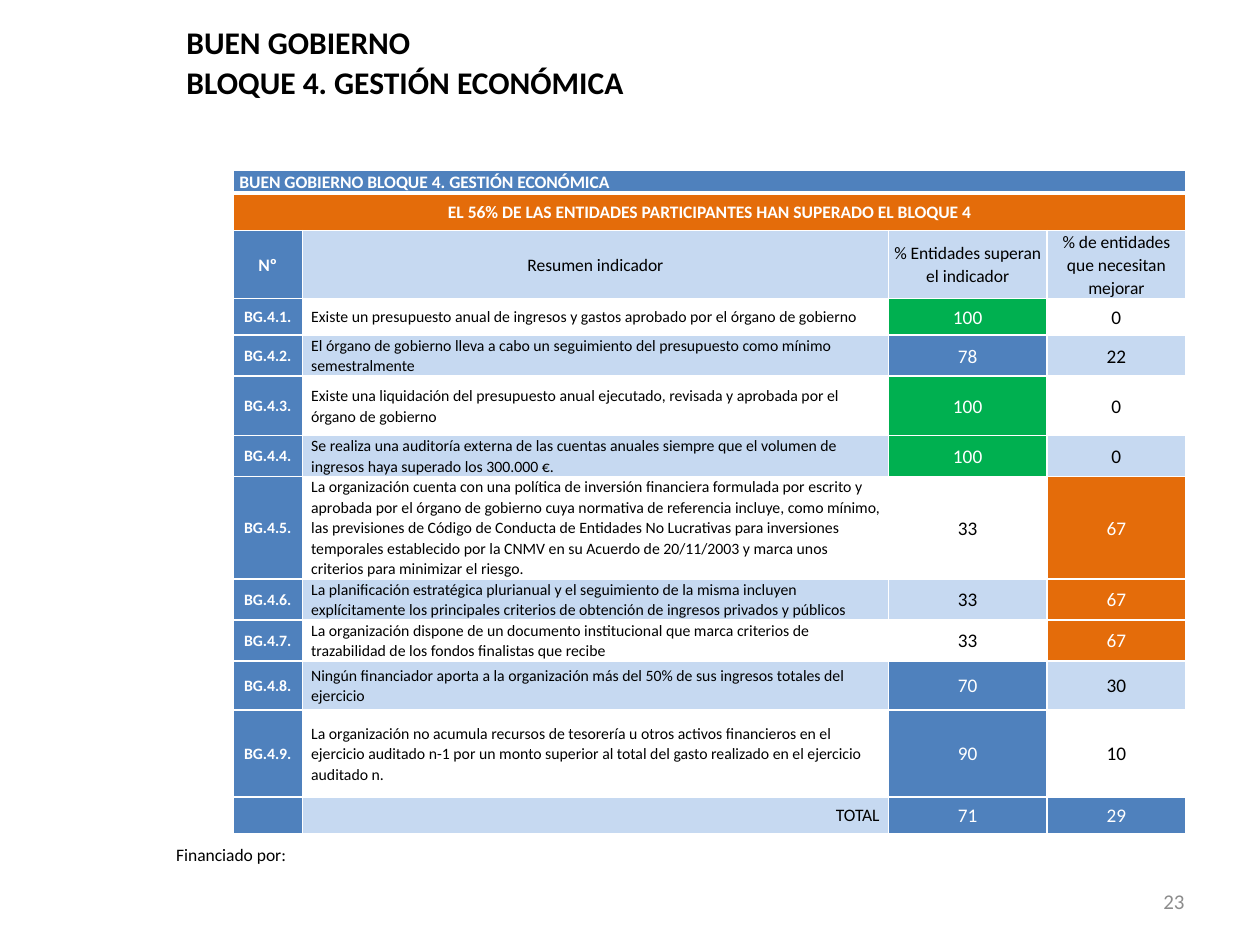
import pptx
import pptx.util
import pptx.dml.color
import pptx.enum.text
import pptx.oxml
import pptx.oxml.ns

Inches, Pt = pptx.util.Inches, pptx.util.Pt
ALIGN = pptx.enum.text.PP_ALIGN
ANCHOR = pptx.enum.text.MSO_ANCHOR

# Content
TITLE = ["BUEN GOBIERNO", "BLOQUE 4. GESTIÓN ECONÓMICA"]
BLOCK = "BUEN GOBIERNO BLOQUE 4. GESTIÓN ECONÓMICA"
RESULT = "EL 56% DE LAS ENTIDADES PARTICIPANTES HAN SUPERADO EL BLOQUE 4"
HEADINGS = ["Nº", "Resumen indicador", "% Entidades superan el indicador",
            "% de entidades que necesitan mejorar"]
# Summary, % that pass, % that need to improve, row height
INDICATORS = [
    ("Existe un presupuesto anual de ingresos y gastos aprobado por el órgano de gobierno",
     100, 0, 0.29),
    ("El órgano de gobierno lleva a cabo un seguimiento del presupuesto como mínimo "
     "semestralmente", 78, 22, 0.22),
    ("Existe una liquidación del presupuesto anual ejecutado, revisada y aprobada por el "
     "órgano de gobierno", 100, 0, 0.47),
    ("Se realiza una auditoría externa de las cuentas anuales siempre que el volumen de "
     "ingresos haya superado los 300.000 €.", 100, 0, 0.19),
    ("La organización cuenta con una política de inversión financiera formulada por escrito y "
     "aprobada por el órgano de gobierno cuya normativa de referencia incluye, como mínimo, "
     "las previsiones de Código de Conducta de Entidades No Lucrativas para inversiones "
     "temporales establecido por la CNMV en su Acuerdo de 20/11/2003 y marca unos criterios "
     "para minimizar el riesgo.", 33, 67, 0.27),
    ("La planificación estratégica plurianual y el seguimiento de la misma incluyen "
     "explícitamente los principales criterios de obtención de ingresos privados y públicos",
     33, 67, 0.31),
    ("La organización dispone de un documento institucional que marca criterios de "
     "trazabilidad de los fondos finalistas que recibe", 33, 67, 0.32),
    ("Ningún financiador aporta a la organización más del 50% de sus ingresos totales del "
     "ejercicio", 70, 30, 0.39),
    ("La organización no acumula recursos de tesorería u otros activos financieros en el "
     "ejercicio auditado n-1 por un monto superior al total del gasto realizado en el "
     "ejercicio auditado n.", 90, 10, 0.69),
]
TOTAL = ("TOTAL", 71, 29)
FUNDING = "Financiado por:"
PAGE = "23"

THEME = {
    "font": "Calibri", "black": "000000", "white": "FFFFFF", "grey": "8C8C8C",
    "blue": "4F81BD", "light": "C6D9F1", "orange": "E46C0A", "green": "00B050",
    "title": 18, "page": 12, "figure": 11, "heading": 10, "body": 9,
}
COLUMN_WIDTHS = [0.55, 4.65, 1.26, 1.1]
ROW_HEIGHTS = [0.18, 0.3, 0.52] + [row[-1] for row in INDICATORS] + [0.29]


def rgb(name):
    return pptx.dml.color.RGBColor.from_string(THEME[name])


def write(frame, lines, size, color="black", bold=False, align=ALIGN.LEFT, spacing=None):
    for i, line in enumerate(lines):
        paragraph = frame.paragraphs[0] if i == 0 else frame.add_paragraph()
        paragraph.text = line
        layout = {"alignment": align, "line_spacing": spacing, "space_before": Pt(0)}
        for key, value in layout.items():
            setattr(paragraph, key, value)
        style = {"name": THEME["font"], "size": Pt(THEME[size]), "bold": bold}
        for key, value in style.items():
            setattr(paragraph.font, key, value)
        paragraph.font.color.rgb = rgb(color)


def set_borders(cell, **widths):
    """White borders of 1 pt, unless a side is given its own width."""
    properties = cell._tc.get_or_add_tcPr()
    for i, side in enumerate(("lnL", "lnR", "lnT", "lnB")):
        properties.insert(i, pptx.oxml.parse_xml(
            f'<a:{side} {pptx.oxml.ns.nsdecls("a")} w="{Pt(widths.get(side, 1))}">'
            f'<a:solidFill><a:srgbClr val="{THEME["white"]}"/></a:solidFill></a:{side}>'))


def fill_cell(cell, text, fill, size, color="white", bold=False, align=ALIGN.CENTER,
              inset=0.07, **borders):
    margins = {"margin_left": Inches(inset), "margin_right": Inches(inset),
               "margin_top": 0, "margin_bottom": 0, "vertical_anchor": ANCHOR.MIDDLE}
    for key, value in margins.items():
        setattr(cell, key, value)
    cell.fill.solid()
    cell.fill.fore_color.rgb = rgb(fill)
    write(cell.text_frame, [str(text)], size, color, bold, align, 1.07)
    set_borders(cell, **borders)


def add_label(slide, box, text, size, color, align=ALIGN.LEFT, anchor=ANCHOR.TOP):
    frame = slide.shapes.add_textbox(*map(Inches, box)).text_frame
    frame.word_wrap = True
    frame.vertical_anchor = anchor
    write(frame, [text], size, color, align=align)


def add_indicator_table(slide):
    table = slide.shapes.add_table(
        len(ROW_HEIGHTS), len(COLUMN_WIDTHS), Inches(1.85), Inches(1.35),
        Inches(sum(COLUMN_WIDTHS)), Inches(sum(ROW_HEIGHTS))).table
    for column, width in zip(table.columns, COLUMN_WIDTHS):
        column.width = Inches(width)
    for row, height in zip(table.rows, ROW_HEIGHTS):
        row.height = Inches(height)

    # Banner rows across the full width
    for r in (0, 1):
        table.cell(r, 0).merge(table.cell(r, 3))
    for c in range(4):
        fill_cell(table.cell(0, c), "" if c else BLOCK, "blue", "heading", bold=True,
                  align=ALIGN.LEFT, inset=0.05, lnB=3)
        fill_cell(table.cell(1, c), "" if c else RESULT, "orange", "heading", bold=True,
                  inset=0.02, lnT=3)

    # Column headings
    for c, heading in enumerate(HEADINGS):
        first = c == 0
        fill_cell(table.cell(2, c), heading, "blue" if first else "light", "heading",
                  "white" if first else "black", bold=first, inset=0.02)

    # Indicators: figures are highlighted from 50 % up
    for i, (summary, passing, improving, _) in enumerate(INDICATORS):
        number, text, passed, improve = table.rows[i + 3].cells
        band = "light" if i % 2 else "white"
        fill_cell(number, f"BG.4.{i + 1}.", "blue", "body", bold=True)
        fill_cell(text, summary, band, "body", "black", align=ALIGN.LEFT)
        strong = "green" if passing == 100 else "blue"
        for cell, value, highlight in ((passed, passing, strong),
                                       (improve, improving, "orange")):
            high = value >= 50
            fill_cell(cell, value, highlight if high else band, "figure",
                      "white" if high else "black")

    # Total
    number, label, passed, improve = table.rows[len(ROW_HEIGHTS) - 1].cells
    fill_cell(number, "", "blue", "body")
    fill_cell(label, TOTAL[0], "light", "heading", "black", align=ALIGN.RIGHT)
    for cell, value in zip((passed, improve), TOTAL[1:]):
        fill_cell(cell, value, "blue", "figure")


def main():
    deck = pptx.Presentation()
    deck.slide_width, deck.slide_height = Inches(10), Inches(7.5)
    slide = deck.slides.add_slide(deck.slide_layouts[5])

    # Title
    title = slide.shapes.title
    place = {"left": 1.38, "top": 0.11, "width": 6.46, "height": 0.75}
    for key, value in place.items():
        setattr(title, key, Inches(value))
    title.text_frame.vertical_anchor = ANCHOR.TOP
    title.text_frame.auto_size = pptx.enum.text.MSO_AUTO_SIZE.NONE
    write(title.text_frame, TITLE, "title", bold=True, spacing=1.07)

    add_indicator_table(slide)

    # Footer
    add_label(slide, (1.3, 6.65, 1.99, 0.27), FUNDING, "heading", "black")
    add_label(slide, (7.17, 6.95, 2.33, 0.4), PAGE, "page", "grey",
              ALIGN.RIGHT, ANCHOR.MIDDLE)
    deck.save("out.pptx")


if __name__ == "__main__":
    main()
